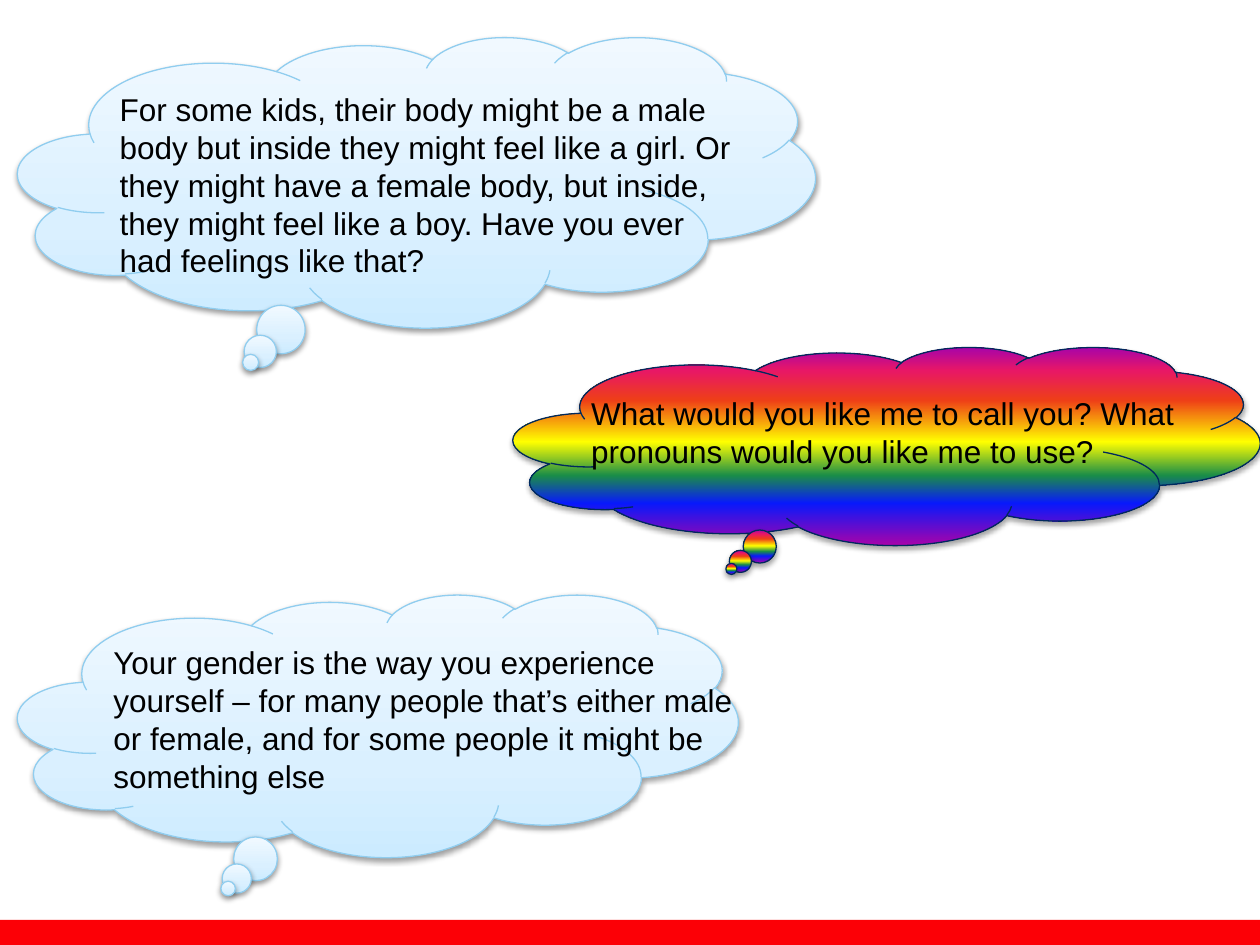
from lxml import etree
from pptx import Presentation
from pptx.dml.color import RGBColor
from pptx.enum.shapes import MSO_SHAPE
from pptx.enum.text import MSO_ANCHOR, MSO_AUTO_SIZE
from pptx.oxml.ns import qn
from pptx.util import Pt

RECTANGLE = MSO_SHAPE.RECTANGLE
CLOUD = MSO_SHAPE.CLOUD
OVAL = MSO_SHAPE.OVAL
TOP = MSO_ANCHOR.TOP
GROW = MSO_AUTO_SIZE.SHAPE_TO_FIT_TEXT

SKY_STOPS = [(0, "CCEBFF"), (35, "DAF0FF"), (100, "F1F9FF")]
RAINBOW_STOPS = [
    (0, "A603AB"), (21, "0819FB"), (35, "1A8D48"), (52, "FFFF00"),
    (73, "EE3F17"), (88, "E81766"), (100, "A603AB"),
]
SKY = {"stops": SKY_STOPS, "outline": "90CDEF", "opacity": 38, "distance": 1.6}
RAINBOW = {"stops": RAINBOW_STOPS, "outline": "00295D", "opacity": 35, "distance": 1.8}
BUBBLES = [(33, 100.8, 6), (30.4, 108.3, 9), (29.2, 112.1, 18)]


def color(value):
    return RGBColor.from_string(value)


def add_color(parent, value):
    return etree.SubElement(parent, qn("a:srgbClr"), val=value)


class SlideBuilder:
    font_name = "Arial"
    font_size = 18
    text_color = "000000"

    def __init__(self, slide):
        self.slide = slide

    def shape(self, kind, box):
        shape = self.slide.shapes.add_shape(kind, *map(Pt, box))
        shape.shadow.inherit = False
        return shape

    def bar(self, box, fill):
        shape = self.shape(RECTANGLE, box)
        shape.fill.solid()
        shape.fill.fore_color.rgb = color(fill)
        shape.line.fill.background()

    def puff(self, kind, box, stops, outline, opacity, distance):
        shape = self.shape(kind, box)
        shape.fill.gradient()
        shape.fill.gradient_angle = 90
        stop_list = next(shape.element.iter(qn("a:gsLst")))
        for stop in list(stop_list):
            stop_list.remove(stop)
        for position, value in stops:
            stop = etree.SubElement(stop_list, qn("a:gs"), pos=str(position * 1000))
            add_color(stop, value)
        shape.line.color.rgb = color(outline)
        shape.line.width = Pt(0.75)
        effects = next(shape.element.iter(qn("a:effectLst")))
        shadow = etree.SubElement(
            effects, qn("a:outerShdw"), blurRad=str(Pt(3)), dist=str(Pt(distance)),
            dir="5400000", rotWithShape="0",
        )
        shadow_color = add_color(shadow, "000000")
        etree.SubElement(shadow_color, qn("a:alpha"), val=str(opacity * 1000))

    def thought(self, box, style):
        left, top, width, height = box
        self.puff(CLOUD, box, **style)
        for across, down, divisor in BUBBLES:
            size = height / divisor
            x = left + width * across / 100 - size / 2
            y = top + height * down / 100 - size / 2
            self.puff(OVAL, (x, y, size, size), **style)

    def text(self, box, words, inset):
        shape = self.slide.shapes.add_textbox(*map(Pt, box))
        frame = shape.text_frame
        frame.word_wrap = True
        frame.auto_size = GROW
        frame.vertical_anchor = TOP
        frame.margin_left = frame.margin_right = Pt(inset)
        frame.margin_top = frame.margin_bottom = Pt(inset)
        frame.text = words
        font = frame.paragraphs[0].runs[0].font
        font.name = self.font_name
        font.size = Pt(self.font_size)
        font.color.rgb = color(self.text_color)


def main():
    presentation = Presentation()
    presentation.slide_width = Pt(720)
    presentation.slide_height = Pt(540)
    slide = presentation.slides.add_slide(presentation.slide_layouts[6])
    builder = SlideBuilder(slide)
    builder.bar((0, 525.6, 720, 14.4), "FC0006")

    thoughts = [
        ((10.2, 21, 455.6, 166), SKY, (64.8, 48, 360, 111.6), 3.6,
         "For some kids, their body might be a male body but inside they might feel "
         "like a girl. Or they might have a female body, but inside, they might feel "
         "like a boy. Have you ever had feelings like that?"),
        ((293.4, 198.2, 426.6, 113.2), RAINBOW, (334.2, 221.8, 360, 49), 3.6,
         "What would you like me to call you? What pronouns would you like me to use?"),
        ((10.2, 339.6, 411.6, 150), SKY, (64.8, 367.6, 360, 90.7), 0,
         "Your gender is the way you experience yourself – for many people that’s "
         "either male or female, and for some people it might be something else"),
    ]
    for cloud_box, style, text_box, inset, words in thoughts:
        builder.thought(cloud_box, style)
        builder.text(text_box, words, inset)

    presentation.save("out.pptx")


if __name__ == "__main__":
    main()
